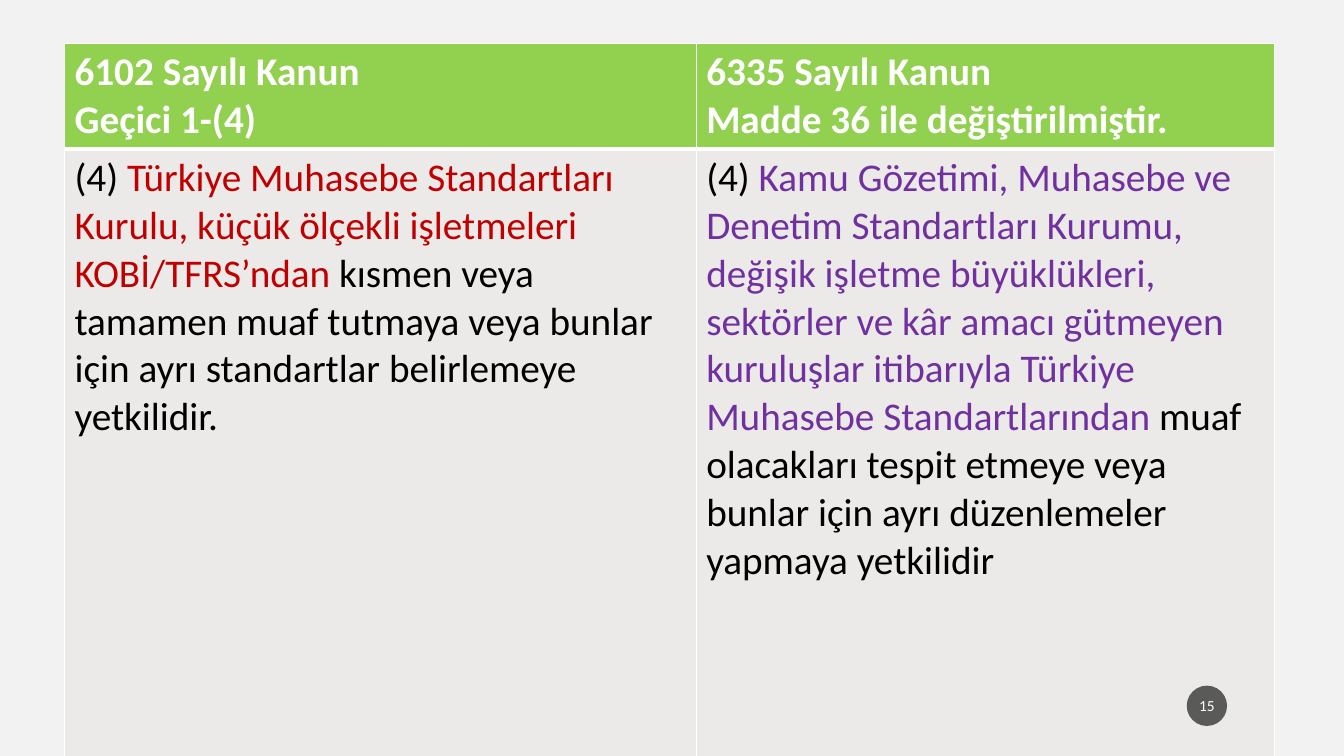
from lxml.etree import SubElement
from pptx import Presentation
from pptx.dml.color import RGBColor
from pptx.enum.shapes import MSO_SHAPE
from pptx.enum.text import MSO_ANCHOR, PP_ALIGN
from pptx.oxml.ns import qn
from pptx.util import Inches, Pt

WIDTH, HEIGHT = 13.33, 7.5
WHITE, BLACK, RED, PURPLE = "FFFFFF", "000000", "C00000", "7030A0"
GREEN, WARM_GRAY, PAGE_GRAY, DARK = "92D050", "ECEAE8", "F2F2F2", "1D1D1D"

HEADERS = [
    [[("6102 Sayılı Kanun", WHITE)], [("Geçici 1-(4)", WHITE)]],
    [[("6335 Sayılı Kanun", WHITE)],
     [("Madde 36 ile değiştirilmiştir.", WHITE)]],
]
ARTICLES = [
    [[("(4) ", BLACK),
      ("Türkiye Muhasebe Standartları Kurulu, küçük ölçekli işletmeleri "
       "KOBİ/TFRS’ndan ", RED),
      ("kısmen veya tamamen muaf tutmaya veya bunlar için ayrı standartlar "
       "belirlemeye yetkilidir.", BLACK)]],
    [[("(4) ", BLACK),
      ("Kamu Gözetimi, Muhasebe ve Denetim Standartları Kurumu, değişik "
       "işletme büyüklükleri, sektörler ve kâr amacı gütmeyen kuruluşlar "
       "itibarıyla Türkiye Muhasebe Standartlarından ", PURPLE),
      ("muaf olacakları tespit etmeye veya bunlar için ayrı düzenlemeler "
       "yapmaya yetkilidir", BLACK)]],
]


def color(value):
    return RGBColor.from_string(value)


def across(share):
    return Inches(WIDTH * share)


def down(share):
    return Inches(HEIGHT * share)


def write_text(frame, paragraphs, *, size, font="Calibri", bold=False,
               align=PP_ALIGN.LEFT):
    """Write paragraphs, each a list of (text, colour) runs."""
    for index, runs in enumerate(paragraphs):
        paragraph = frame.add_paragraph() if index else frame.paragraphs[0]
        paragraph.alignment = align
        for text, hue in runs:
            run = paragraph.add_run()
            run.text = text
            run.font.name = font
            run.font.size = Pt(size)
            run.font.bold = bold
            run.font.color.rgb = color(hue)


class SlideBuilder:
    def __init__(self, presentation):
        self.body_size = 28
        self.number_size = 11
        self.slide = presentation.slides.add_slide(presentation.slide_layouts[6])
        background = self.slide.background.fill
        background.solid()
        background.fore_color.rgb = color(PAGE_GRAY)

    def border(self, cell, **widths):
        properties = cell._tc.get_or_add_tcPr()
        for side in ("L", "R", "T", "B"):
            line = SubElement(properties, qn(f"a:ln{side}"),
                              w=str(Pt(widths.get(side, 1))))
            fill = SubElement(line, qn("a:solidFill"))
            SubElement(fill, qn("a:srgbClr"), val=WHITE)

    def cell(self, cell, paragraphs, fill, bold, **widths):
        self.border(cell, **widths)
        cell.fill.solid()
        cell.fill.fore_color.rgb = color(fill)
        write_text(cell.text_frame, paragraphs, size=self.body_size, bold=bold)

    def comparison(self, left, top, columns, rows):
        table = self.slide.shapes.add_table(
            len(rows), len(columns), across(left), down(top),
            across(sum(columns)), down(sum(rows))).table
        for column, share in zip(table.columns, columns):
            column.width = across(share)
        for row, share in zip(table.rows, rows):
            row.height = down(share)
        for index, (header, article) in enumerate(zip(HEADERS, ARTICLES)):
            self.cell(table.cell(0, index), header, GREEN, True, B=3)
            self.cell(table.cell(1, index), article, WARM_GRAY, False, T=3)

    def page_number(self, number, left, top, diameter):
        badge = self.slide.shapes.add_shape(
            MSO_SHAPE.OVAL, across(left), down(top),
            across(diameter), across(diameter))
        badge.shadow.inherit = False
        badge.line.fill.background()
        badge.fill.solid()
        badge.fill.fore_color.rgb = color(DARK)
        # Opacity of the badge
        hue = badge.fill._xPr.find(qn("a:solidFill")).find(qn("a:srgbClr"))
        SubElement(hue, qn("a:alpha"), val="70000")
        frame = badge.text_frame
        frame.word_wrap = True
        frame.vertical_anchor = MSO_ANCHOR.MIDDLE
        frame.margin_left = frame.margin_right = Inches(0.02)
        frame.margin_top = frame.margin_bottom = Inches(0.05)
        write_text(frame, [[(number, WHITE)]], size=self.number_size,
                   align=PP_ALIGN.CENTER)


def main():
    presentation = Presentation()
    presentation.slide_width = Inches(WIDTH)
    presentation.slide_height = Inches(HEIGHT)
    builder = SlideBuilder(presentation)

    # Old and new wording of the law, side by side
    builder.comparison(left=0.048, top=0.057, columns=[0.47, 0.43],
                       rows=[0.137, 0.806])

    # Slide number
    builder.page_number("15", left=0.883, top=0.907, diameter=0.03)

    presentation.save("out.pptx")


if __name__ == "__main__":
    main()
